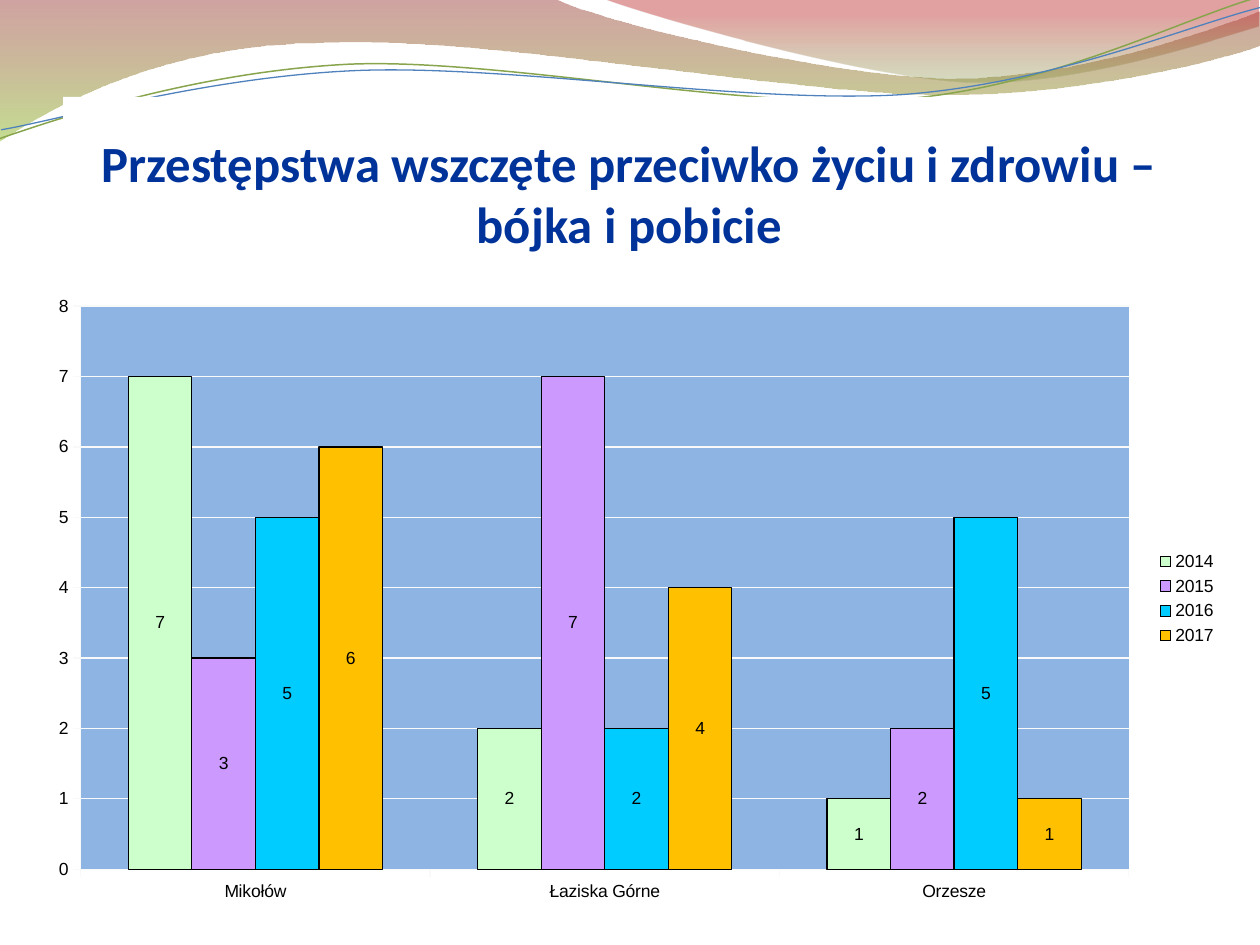
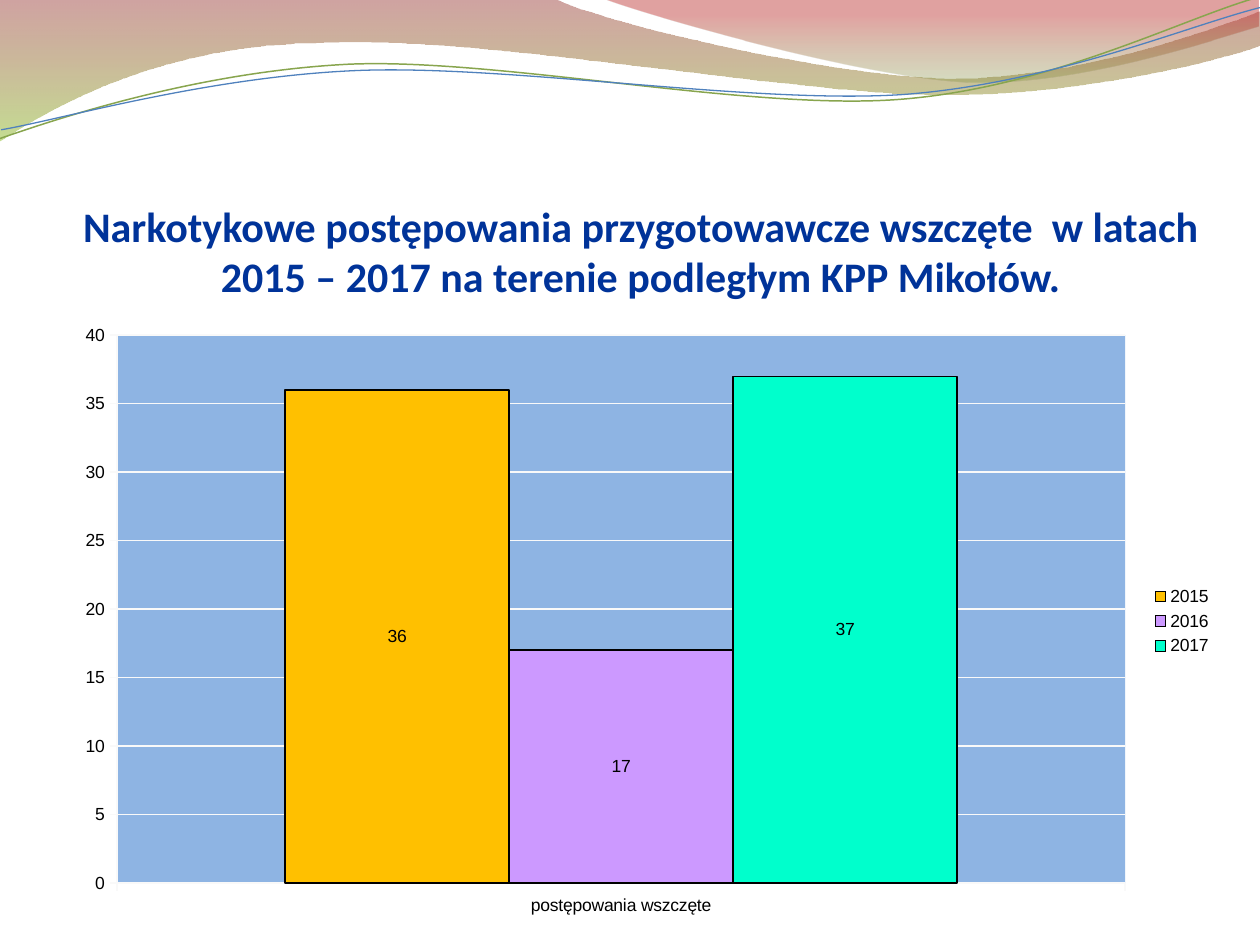
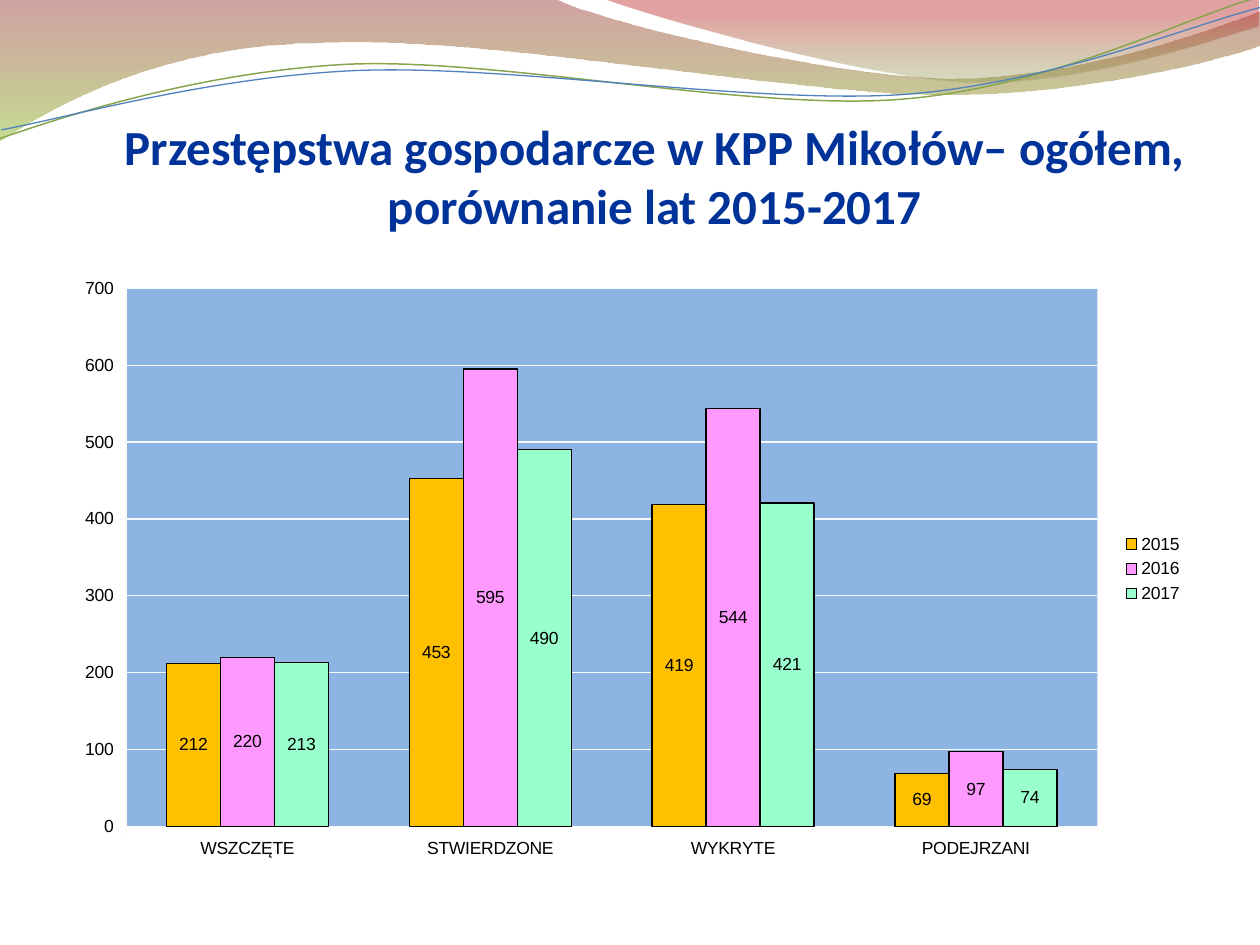
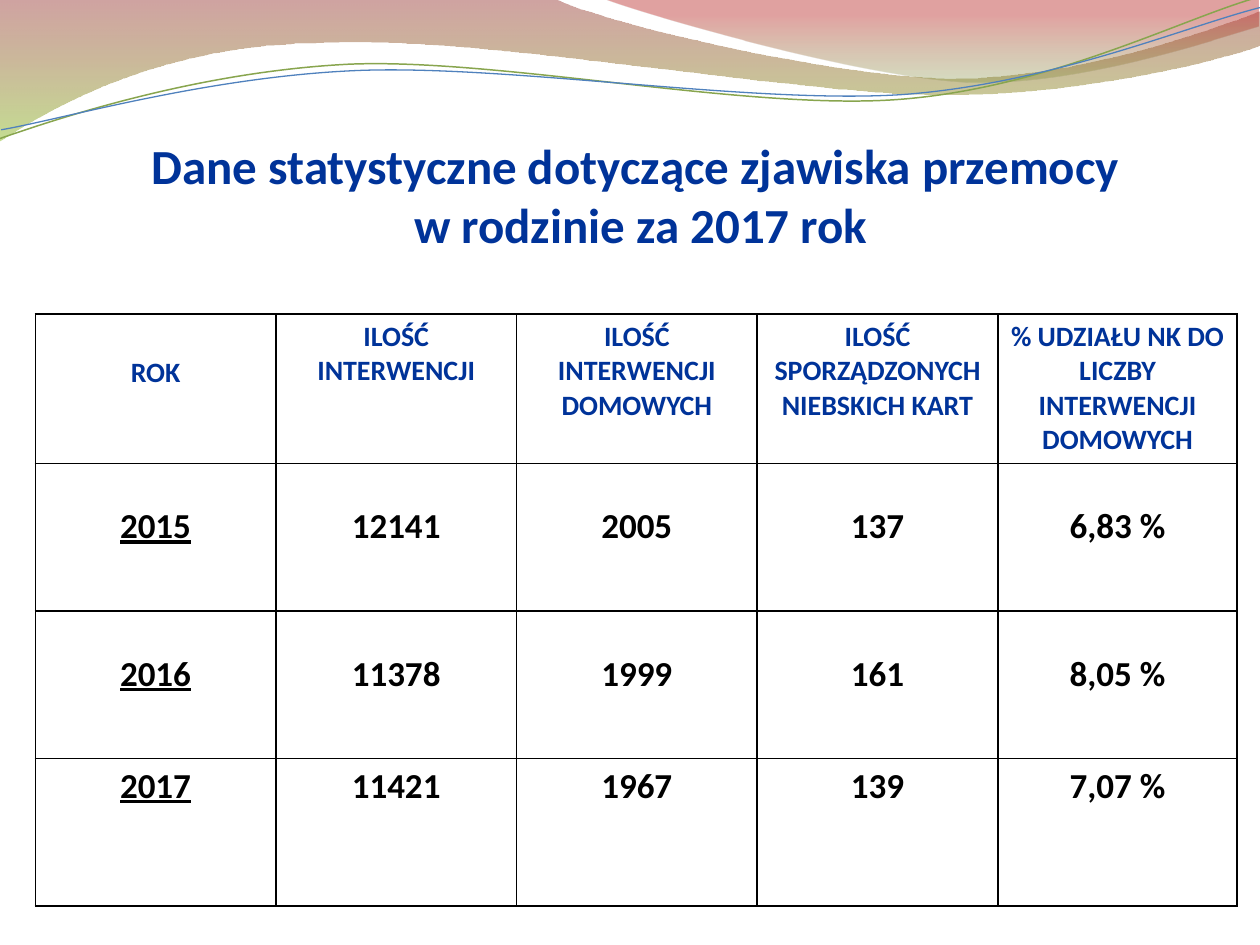
from math import cos, radians, sin

from lxml import etree
from pptx import Presentation
from pptx.chart.data import CategoryChartData
from pptx.dml.color import RGBColor
from pptx.enum.chart import XL_CHART_TYPE, XL_LABEL_POSITION, XL_LEGEND_POSITION, XL_TICK_MARK
from pptx.enum.shapes import MSO_SHAPE
from pptx.enum.text import MSO_ANCHOR, PP_ALIGN
from pptx.oxml import parse_xml
from pptx.oxml.ns import nsdecls, qn
from pptx.util import Inches, Pt

COLUMN = XL_CHART_TYPE.COLUMN_CLUSTERED
MIDDLE = XL_LABEL_POSITION.CENTER
RIGHT = XL_LEGEND_POSITION.RIGHT
OUTSIDE = XL_TICK_MARK.OUTSIDE
RECT = MSO_SHAPE.RECTANGLE
BOTTOM = MSO_ANCHOR.BOTTOM
CENTER = PP_ALIGN.CENTER


class Theme:
    text_font = "Calibri"
    chart_font = "Arial"
    navy = "003399"
    black = "000000"
    white = "FFFFFF"
    plot = "8EB4E3"
    grid = "F9F9F9"
    mint = "CCFFCC"
    violet = "CC99FF"
    cyan = "00CCFF"
    gold = "FFC000"
    teal = "00FFCC"
    pink = "FF99FF"
    aqua = "99FFCC"
    chart_size = 10
    head_size = 16
    cell_size = 20
    thin = 0.75
    border = 1


BANDS = [
    dict(start=(0, -0.01), parts=[
        (4.4, -0.01),
        (4.75, 0.17, 6.63, 0.62, 7.58, 0.62),
        (8.52, 0.62, 9.58, 0.25, 9.99, 0.09),
        (10, 0.36),
        (9.83, 0.43, 8.69, 0.75, 7.45, 0.75),
        (6.21, 0.74, 3.81, 0.28, 2.57, 0.34),
        (1.29, 0.35, 0.46, 0.82, -0.01, 1.12),
        (0, -0.01)],
        stops=[(0, "973330", 45), (1, "95C238", 55)], angle=270),
    dict(start=(4.79, -0.01), parts=[
        (5.09, 0.11, 6.82, 0.61, 7.68, 0.65),
        (8.55, 0.68, 9.61, 0.32, 9.99, 0.21),
        (9.99, 0),
        (4.79, -0.01)],
        stops=[(0, "769537", 30), (0.8, "BE3330", 45)], angle=90),
]

TILT = -2.7
WAVES = [
    dict(start=(0, 1.1), parts=[
        (0.49, 0.93, 1.58, 0.57, 2.77, 0.51),
        (3.96, 0.46, 5.93, 0.88, 7.13, 0.79),
        (8.33, 0.7, 9.38, 0.15, 9.98, -0.02)],
        mid=(5, 0.57), color="88A54E", width=0.85),
    dict(start=(0.01, 1.03), parts=[
        (0.48, 0.95, 1.64, 0.61, 2.83, 0.56),
        (4.03, 0.51, 5.97, 0.83, 7.17, 0.75),
        (8.36, 0.66, 9.41, 0.21, 10, 0.06)],
        mid=(5, 0.58), color="4F81BD", width=0.75),
]

SLIDES = [
    dict(
        title=["Przestępstwa wszczęte przeciwko życiu i zdrowiu – bójka i pobicie"],
        box=(0.5, 0.77, 8.99, 1.24), size=29,
        chart=dict(
            box=(0.28, 2.25, 9.48, 5), plot=(0.64, 2.43, 8.32, 4.47),
            top=8, step=1,
            cats=["Mikołów", "Łaziska Górne", "Orzesze"],
            rows=[("2014", [7, 2, 1], Theme.mint),
                  ("2015", [3, 7, 2], Theme.violet),
                  ("2016", [5, 2, 5], Theme.cyan),
                  ("2017", [6, 4, 1], Theme.gold)])),
    dict(
        title=["Narkotykowe postępowania przygotowawcze wszczęte  w latach "
               "2015 – 2017 na terenie podległym KPP Mikołów."],
        box=(0.59, 0.99, 8.99, 1.4), size=24,
        chart=dict(
            box=(0.5, 2.49, 9.22, 4.88), plot=(0.93, 2.66, 8, 4.35),
            top=40, step=5,
            cats=["postępowania wszczęte"],
            rows=[("2015", [36], Theme.gold),
                  ("2016", [17], Theme.violet),
                  ("2017", [37], Theme.teal)])),
    dict(
        title=["Przestępstwa gospodarcze w KPP Mikołów– ogółem, ",
               "porównanie lat 2015-2017"],
        box=(0.98, 0.84, 8.43, 1.02), size=28,
        chart=dict(
            box=(0.5, 2.12, 8.99, 4.79), plot=(1, 2.29, 7.71, 4.27),
            top=700, step=100,
            cats=["WSZCZĘTE", "STWIERDZONE", "WYKRYTE", "PODEJRZANI"],
            rows=[("2015", [212, 453, 419, 69], Theme.gold),
                  ("2016", [220, 595, 544, 97], Theme.pink),
                  ("2017", [213, 490, 421, 74], Theme.aqua)])),
    dict(
        title=["Dane statystyczne dotyczące zjawiska przemocy ",
               "w rodzinie za 2017 rok"],
        box=(0.67, 0.99, 8.83, 1.02), size=28,
        table=dict(
            box=(0.28, 2.49, 9.52, 4.7),
            widths=[1.91, 1.91, 1.91, 1.91, 1.9],
            heights=[1.19, 1.17, 1.17, 1.17],
            low=0.33,
            cells=[
                ["ROK", "ILOŚĆ INTERWENCJI", "ILOŚĆ INTERWENCJI DOMOWYCH",
                 "ILOŚĆ SPORZĄDZONYCH NIEBSKICH KART",
                 "% UDZIAŁU NK DO LICZBY INTERWENCJI DOMOWYCH"],
                ["2015", "12141", "2005", "137", "6,83 %"],
                ["2016", "11378", "1999", "161", "8,05 %"],
                ["2017", "11421", "1967", "139", "7,07 %"]])),
]


def inches(box):
    return [Inches(v) for v in box]


def rgb(code):
    return RGBColor.from_string(code)


def paint(item, fill, line=None):
    item.fill.solid()
    item.fill.fore_color.rgb = rgb(fill)
    if line:
        stroke(item.line, line, Theme.thin)


def stroke(line, color, width):
    line.color.rgb = rgb(color)
    line.width = Pt(width)


def style(para, size, color, under=None):
    para.alignment = CENTER
    font = para.font
    font.name = Theme.text_font
    font.size = Pt(size)
    font.bold = True
    font.underline = under
    font.color.rgb = rgb(color)


def turn(point, mid, angle):
    cx, cy = mid
    dx, dy = point[0] - cx, point[1] - cy
    c, s = cos(radians(angle)), sin(radians(angle))
    return cx + dx * c - dy * s, cy + dx * s + dy * c


def outline(slide, start, parts, mid=(0, 0), angle=0):
    points = [start]
    for part in parts:
        points += zip(part[::2], part[1::2])
    first, *rest = [inches(turn(p, mid, angle)) for p in points]
    pen = slide.shapes.build_freeform(*first)
    pen.add_line_segments(rest, close=False)
    shape = pen.convert_to_shape()
    shape.shadow.inherit = False
    bend(shape, parts)
    return shape


def bend(shape, parts):
    steps = iter(list(shape.element.iter(qn("a:lnTo"))))
    for part in parts:
        step = next(steps)
        if len(part) == 6:
            step.tag = qn("a:cubicBezTo")
            for _ in range(2):
                extra = next(steps)
                step.append(extra[0])
                extra.getparent().remove(extra)


def add_band(slide, band):
    shape = outline(slide, band["start"], band["parts"])
    shape.line.fill.background()
    fill = shape.fill
    fill.gradient()
    fill.gradient_angle = band["angle"]
    for stop, (pos, color, _) in zip(fill.gradient_stops, band["stops"]):
        stop.position = pos
        stop.color.rgb = rgb(color)
    tones = shape.element.spPr.iter(qn("a:srgbClr"))
    for tone, (_, _, alpha) in zip(list(tones), band["stops"]):
        etree.SubElement(tone, qn("a:alpha")).set("val", str(alpha * 1000))
    return shape


def add_wave(slide, wave):
    shape = outline(slide, wave["start"], wave["parts"], wave["mid"], -TILT)
    shape.rotation = TILT
    shape.fill.background()
    stroke(shape.line, wave["color"], wave["width"])
    return shape


def dress_master(prs, slide):
    shapes = [add_band(slide, b) for b in BANDS]
    shapes += [add_wave(slide, w) for w in WAVES]
    tree = prs.slide_master.element.cSld.spTree
    for i, shape in enumerate(shapes):
        shape.element.nvSpPr.cNvPr.set("id", str(100 + i))
        tree.insert(2 + i, shape.element)


def add_title(slide, lines, box, size):
    shape = slide.shapes.add_shape(RECT, *inches(box))
    shape.shadow.inherit = False
    paint(shape, Theme.white)
    shape.line.fill.background()
    frame = shape.text_frame
    frame.word_wrap = True
    frame.vertical_anchor = BOTTOM
    frame.margin_left = frame.margin_right = frame.margin_bottom = 0
    frame.margin_top = Inches(0.05)
    frame.text = "\n".join(lines)
    for para in frame.paragraphs:
        style(para, size, Theme.navy)


def set_plot(chart, box, plot):
    area = chart._chartSpace.chart.plotArea
    old = area.find(qn("c:layout"))
    if old is not None:
        area.remove(old)
    left, top, wide, high = box
    x, y, w, h = plot
    sides = dict(x=(x - left) / wide, y=(y - top) / high, w=w / wide, h=h / high)
    modes = "".join(f'<c:{k}Mode val="edge"/>' for k in "xy")
    values = "".join(f'<c:{k} val="{v:.4f}"/>' for k, v in sides.items())
    area.insert(0, parse_xml(
        f'<c:layout {nsdecls("c")}><c:manualLayout><c:layoutTarget val="inner"/>'
        f'{modes}{values}</c:manualLayout></c:layout>'))
    area.append(parse_xml(
        f'<c:spPr {nsdecls("c", "a")}><a:solidFill><a:srgbClr val="{Theme.plot}"/>'
        '</a:solidFill><a:ln><a:noFill/></a:ln></c:spPr>'))


def add_chart(slide, box, plot, top, step, cats, rows):
    data = CategoryChartData()
    data.categories = cats
    for name, values, _ in rows:
        data.add_series(name, values)
    chart = slide.shapes.add_chart(COLUMN, *inches(box), data).chart
    chart.has_title = False
    chart.font.name = Theme.chart_font
    chart.font.size = Pt(Theme.chart_size)
    chart.font.color.rgb = rgb(Theme.black)
    chart.has_legend = True
    chart.legend.position = RIGHT
    chart.legend.include_in_layout = False
    bars = chart.plots[0]
    bars.gap_width = 150
    bars.overlap = 0
    bars.vary_by_categories = False
    for bar, (_, _, color) in zip(bars.series, rows):
        paint(bar.format, color, Theme.black)
        bar.data_labels.show_value = True
        bar.data_labels.position = MIDDLE
    scale = chart.value_axis
    scale.minimum_scale = 0
    scale.maximum_scale = top
    scale.major_unit = step
    scale.has_major_gridlines = True
    stroke(scale.major_gridlines.format.line, Theme.grid, Theme.thin)
    for axis in (scale, chart.category_axis):
        axis.major_tick_mark = OUTSIDE
        stroke(axis.format.line, Theme.grid, Theme.thin)
    set_plot(chart, box, plot)


def frame_cell(cell):
    props = cell._tc.get_or_add_tcPr()
    for side in "LRTB":
        props.append(parse_xml(
            f'<a:ln{side} {nsdecls("a")} w="{Pt(Theme.border)}"><a:solidFill>'
            f'<a:srgbClr val="{Theme.black}"/></a:solidFill></a:ln{side}>'))
    cell.fill.background()


def add_table(slide, box, widths, heights, low, cells):
    table = slide.shapes.add_table(len(cells), len(widths), *inches(box)).table
    table.first_row = table.horz_banding = False
    for col, wide in zip(table.columns, widths):
        col.width = Inches(wide)
    for r, (texts, high) in enumerate(zip(cells, heights)):
        table.rows[r].height = Inches(high)
        for c, text in enumerate(texts):
            cell = table.cell(r, c)
            frame_cell(cell)
            cell.text = text
            if r in (1, 2) or r == c == 0:
                cell.margin_top = Inches(low)
            para = cell.text_frame.paragraphs[0]
            if r == 0:
                style(para, Theme.head_size, Theme.navy)
            else:
                style(para, Theme.cell_size, Theme.black, c == 0)


def main():
    prs = Presentation()
    prs.slide_width, prs.slide_height = Inches(10), Inches(7.5)
    blank = prs.slide_layouts[6]
    for i, item in enumerate(SLIDES):
        slide = prs.slides.add_slide(blank)
        if i == 0:
            dress_master(prs, slide)
        add_title(slide, item["title"], item["box"], item["size"])
        if "chart" in item:
            add_chart(slide, **item["chart"])
        else:
            add_table(slide, **item["table"])
    prs.save("out.pptx")


if __name__ == "__main__":
    main()
